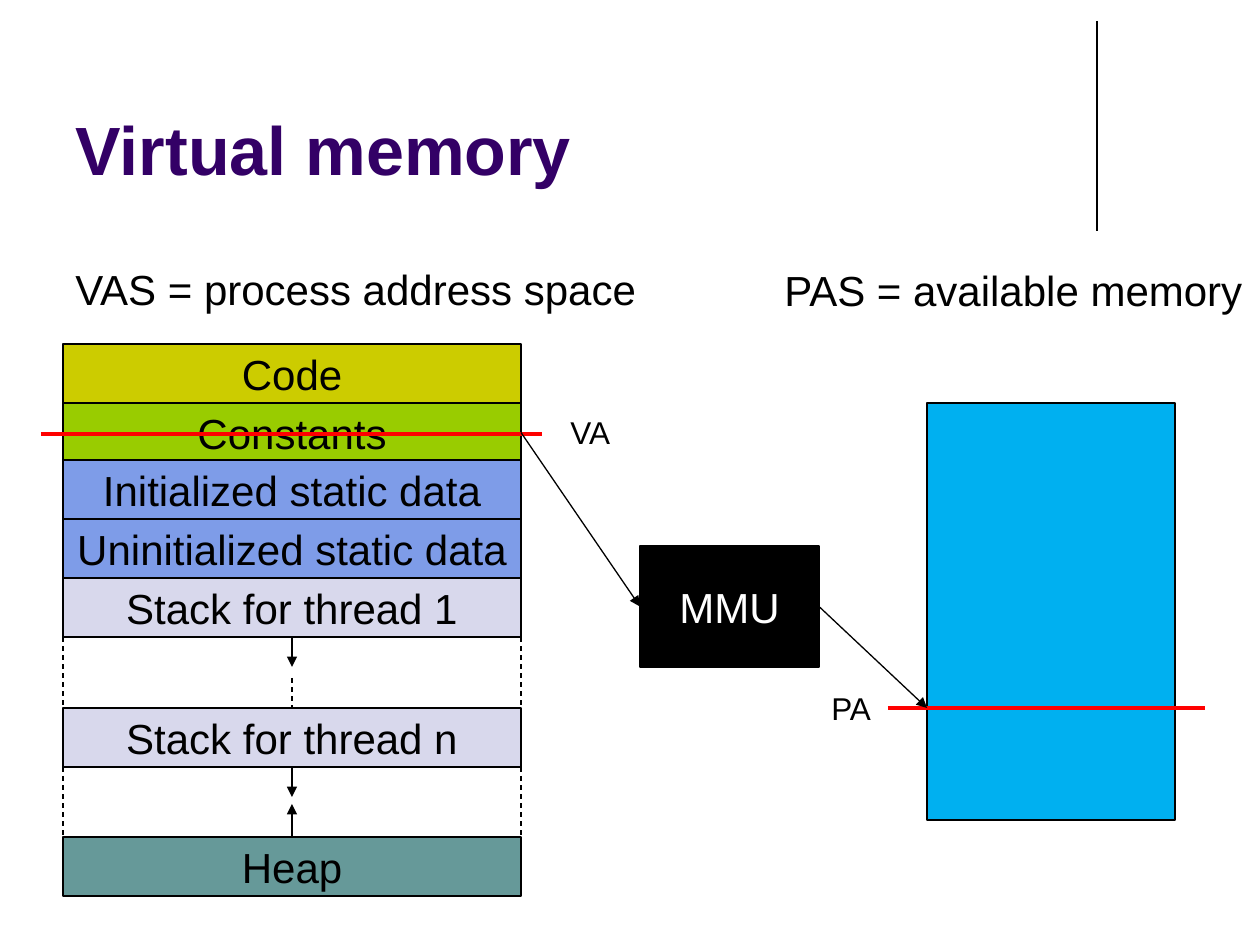
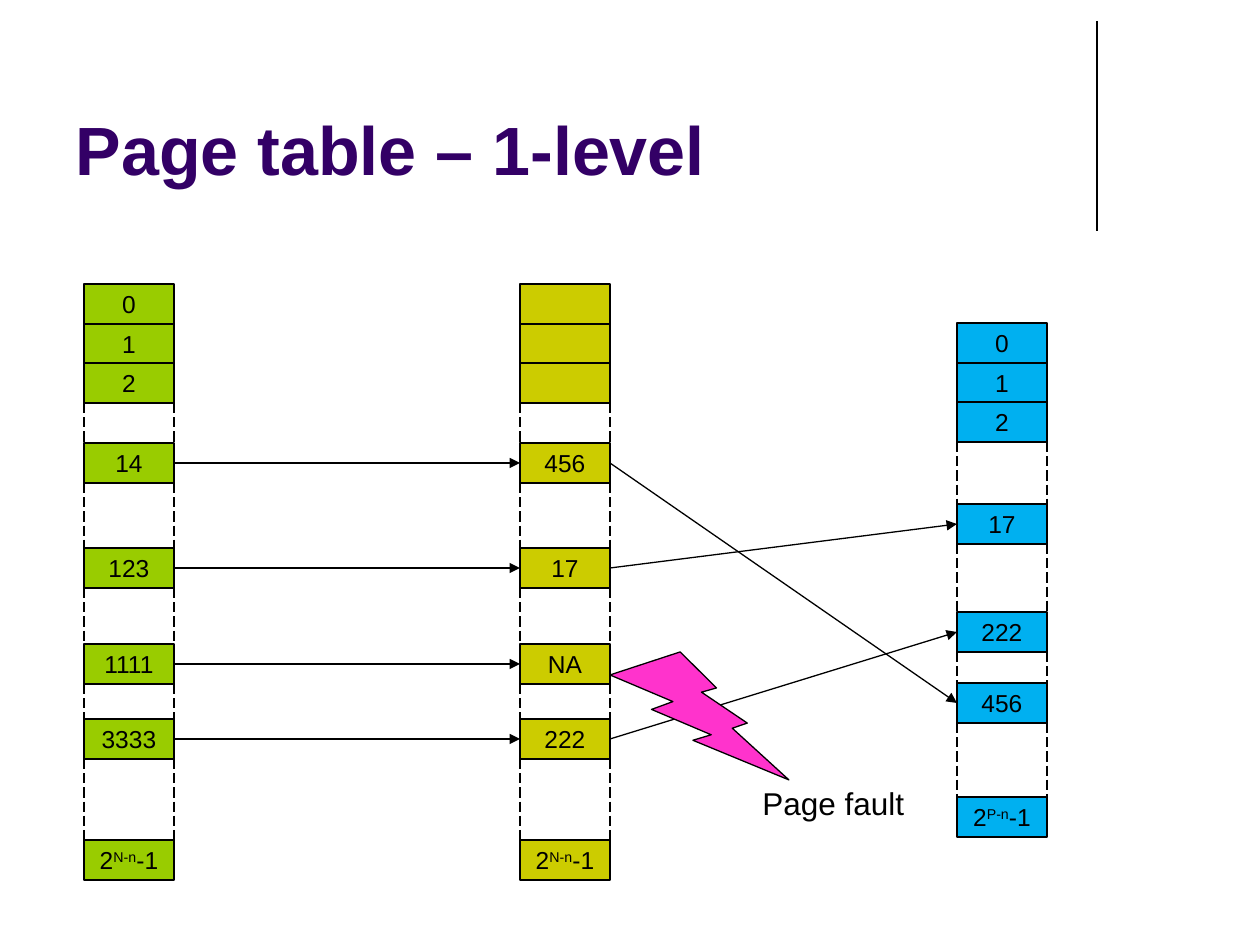
from lxml import etree
from pptx import Presentation
from pptx import util as u
from pptx.dml.color import RGBColor
from pptx.enum import dml, shapes, text
from pptx.oxml.ns import qn

PX = u.Inches(1) / 126
FONT = "Arial"
BLACK = RGBColor(0x00, 0x00, 0x00)
WHITE = RGBColor(0xFF, 0xFF, 0xFF)
PURPLE = RGBColor(0x33, 0x00, 0x66)
RED = RGBColor(0xFF, 0x00, 0x00)
OLIVE = RGBColor(0xCC, 0xCC, 0x00)
GREEN = RGBColor(0x99, 0xCC, 0x00)
PERIWINKLE = RGBColor(0x7E, 0x9C, 0xE8)
LAVENDER = RGBColor(0xD8, 0xD8, 0xEC)
TEAL = RGBColor(0x66, 0x99, 0x99)
SKY = RGBColor(0x00, 0xB0, 0xF0)
PINK = RGBColor(0xFF, 0x33, 0xCC)
DASH = dml.MSO_LINE.DASH
LONG_DASH = dml.MSO_LINE.LONG_DASH
TOP, LEFT, BOTTOM, RIGHT = range(4)
PAGE_WIDTH, PAGE_HEIGHT = 90, 40


def px(*lengths):
    return [round(length * PX) for length in lengths]


def add_run(paragraph, content, size, color=BLACK, bold=False, raised=False):
    run = paragraph.add_run()
    run.text = content
    font = run.font
    font.name, font.size, font.bold = FONT, u.Pt(size), bold
    font.color.rgb = color
    if raised:
        run._r.get_or_add_rPr().set("baseline", "30000")


def add_label(slide, box, content, size):
    frame = slide.shapes.add_textbox(*px(*box)).text_frame
    frame.word_wrap = False
    frame.auto_size = text.MSO_AUTO_SIZE.SHAPE_TO_FIT_TEXT
    add_run(frame.paragraphs[0], content, size)


def add_block(slide, box, fill, runs=(), size=24, color=BLACK,
              preset=shapes.MSO_SHAPE.RECTANGLE):
    """Add an outlined shape; every second run is a superscript."""
    shape = slide.shapes.add_shape(preset, *px(*box))
    shape.shadow.inherit = False
    shape.fill.solid()
    shape.fill.fore_color.rgb = fill
    shape.line.color.rgb = BLACK
    shape.line.width = u.Pt(0.75)
    frame = shape.text_frame
    frame.word_wrap = False
    frame.vertical_anchor = text.MSO_ANCHOR.MIDDLE
    paragraph = frame.paragraphs[0]
    paragraph.alignment = text.PP_ALIGN.CENTER
    for index, content in enumerate(runs):
        add_run(paragraph, content, size, color, raised=index % 2 == 1)
    return shape


def add_line(slide, start, end, color=BLACK, width=0.75, dash=None, arrow=False):
    """Draw a line between ends that are either (x, y) or (shape, side)."""
    joined = [not isinstance(point[0], int) for point in (start, end)]
    points = [(0, 0) if join else px(*point)
              for join, point in zip(joined, (start, end))]
    connector = slide.shapes.add_connector(
        shapes.MSO_CONNECTOR.STRAIGHT, *points[0], *points[1])
    if joined[0]:
        connector.begin_connect(*start)
    if joined[1]:
        connector.end_connect(*end)
    connector.line.color.rgb = color
    connector.line.width = u.Pt(width)
    if dash:
        connector.line.dash_style = dash
    properties = connector._element.spPr
    if arrow:
        etree.SubElement(properties.find(qn("a:ln")), qn("a:tailEnd"), type="triangle")
    etree.SubElement(properties, qn("a:effectLst"))


def add_side_dashes(slide, left, right, top, bottom, dash):
    for x in (left, right):
        add_line(slide, (x, top), (x, bottom), dash=dash)


def add_titled_slide(presentation, title):
    slide = presentation.slides.add_slide(presentation.slide_layouts[5])
    add_line(slide, (1097, 21), (1097, 231))
    placeholder = slide.shapes.title
    placeholder.left, placeholder.top, placeholder.width, placeholder.height = px(
        63, 16, 1040, 179)
    frame = placeholder.text_frame
    frame.auto_size = text.MSO_AUTO_SIZE.NONE
    frame.vertical_anchor = text.MSO_ANCHOR.BOTTOM
    paragraph = frame.paragraphs[0]
    paragraph.alignment = text.PP_ALIGN.LEFT
    add_run(paragraph, title, 39, PURPLE, bold=True)
    return slide


def add_address_space(slide, left, top, width):
    """Stack the segments of a process and return them by name."""
    height = 59
    right, middle = left + width, left + width // 2
    rows = [
        ("Code", 0, OLIVE),
        ("Constants", 59, GREEN),
        ("Initialized static data", 116, PERIWINKLE),
        ("Uninitialized static data", 175, PERIWINKLE),
        ("Stack for thread 1", 234, LAVENDER),
        ("Stack for thread n", 364, LAVENDER),
        ("Heap", 493, TEAL),
    ]
    segments = {
        name: add_block(slide, (left, top + offset, width, height), fill, [name])
        for name, offset, fill in rows}
    first, last, heap = list(segments.values())[-3:]
    first_end, last_end = top + 234 + height, top + 364 + height

    add_side_dashes(slide, left, right, first_end, top + 364, DASH)
    add_side_dashes(slide, left, right, last_end, top + 493, DASH)
    add_line(slide, (first, BOTTOM), (middle, first_end + 30), arrow=True)
    add_line(slide, (middle, first_end + 41), (last, TOP), dash=DASH)
    add_line(slide, (last, BOTTOM), (middle, last_end + 30), arrow=True)
    add_line(slide, (heap, TOP), (middle, top + 460), arrow=True)
    return segments


def add_physical_memory(slide, left, top, width, height, marked):
    add_block(slide, (left, top, width, height), SKY)
    add_line(slide, (left - 39, marked), (left + width + 30, marked), RED, 2.25)


def build_virtual_memory(presentation):
    slide = add_titled_slide(presentation, "Virtual memory")
    add_label(slide, (63, 257, 592, 63), "VAS = process address space", 24)
    add_label(slide, (772, 258, 488, 63), "PAS = available memory", 24)
    segments = add_address_space(slide, 63, 344, 458)
    add_line(slide, (41, 434), (542, 434), RED, 2.25)

    mmu = add_block(slide, (640, 546, 179, 121), BLACK, ["MMU"], color=WHITE)
    physical_address = (927, 708)
    add_physical_memory(slide, 927, 403, 248, 417, physical_address[1])
    add_line(slide, (segments["Constants"], RIGHT), (mmu, LEFT), arrow=True)
    add_line(slide, (mmu, RIGHT), physical_address, arrow=True)
    add_label(slide, (558, 407, 66, 50), "VA", 18)
    add_label(slide, (819, 683, 66, 50), "PA", 18)


def add_page_column(slide, left, top, fill, offsets, labels):
    """Place pages down a column, dash the gaps, and return the pages."""
    for offset, following in zip(offsets, offsets[1:]):
        if following > offset + PAGE_HEIGHT:
            add_side_dashes(slide, left, left + PAGE_WIDTH,
                            top + offset + PAGE_HEIGHT, top + following, LONG_DASH)
    return [
        add_block(slide, (left, top + offset, PAGE_WIDTH, PAGE_HEIGHT), fill, runs, 14)
        for offset, runs in zip(offsets, labels)]


def build_page_table(presentation):
    slide = add_titled_slide(presentation, "Page table – 1-level")
    virtual_offsets = [0, 40, 79, 159, 264, 360, 435, 556]
    frame_offsets = [0, 40, 79, 181, 289, 360, 474]
    last_page = ("2", "N-n", "-1")
    pages = add_page_column(
        slide, 84, 284, GREEN, virtual_offsets,
        [["0"], ["1"], ["2"], ["14"], ["123"], ["1111"], ["3333"], last_page])
    entries = add_page_column(
        slide, 520, 284, OLIVE, virtual_offsets,
        [[], [], [], ["456"], ["17"], ["NA"], ["222"], last_page])
    frames = add_page_column(
        slide, 957, 323, SKY, frame_offsets,
        [["0"], ["1"], ["2"], ["17"], ["222"], ["456"], ("2", "P-n", "-1")])

    for page, entry in zip(pages[3:7], entries[3:7]):
        add_line(slide, (page, RIGHT), (entry, LEFT), arrow=True)
    for entry, frame in ((3, 5), (6, 4), (4, 3)):
        add_line(slide, (entries[entry], RIGHT), (frames[frame], LEFT), arrow=True)

    add_block(slide, (610, 652, 179, 128), PINK,
              preset=shapes.MSO_SHAPE.LIGHTNING_BOLT)
    add_label(slide, (750, 778, 169, 50), "Page fault", 18)


def main():
    presentation = Presentation()
    presentation.slide_width, presentation.slide_height = px(1260, 945)
    build_virtual_memory(presentation)
    build_page_table(presentation)
    presentation.save("out.pptx")


if __name__ == "__main__":
    main()
